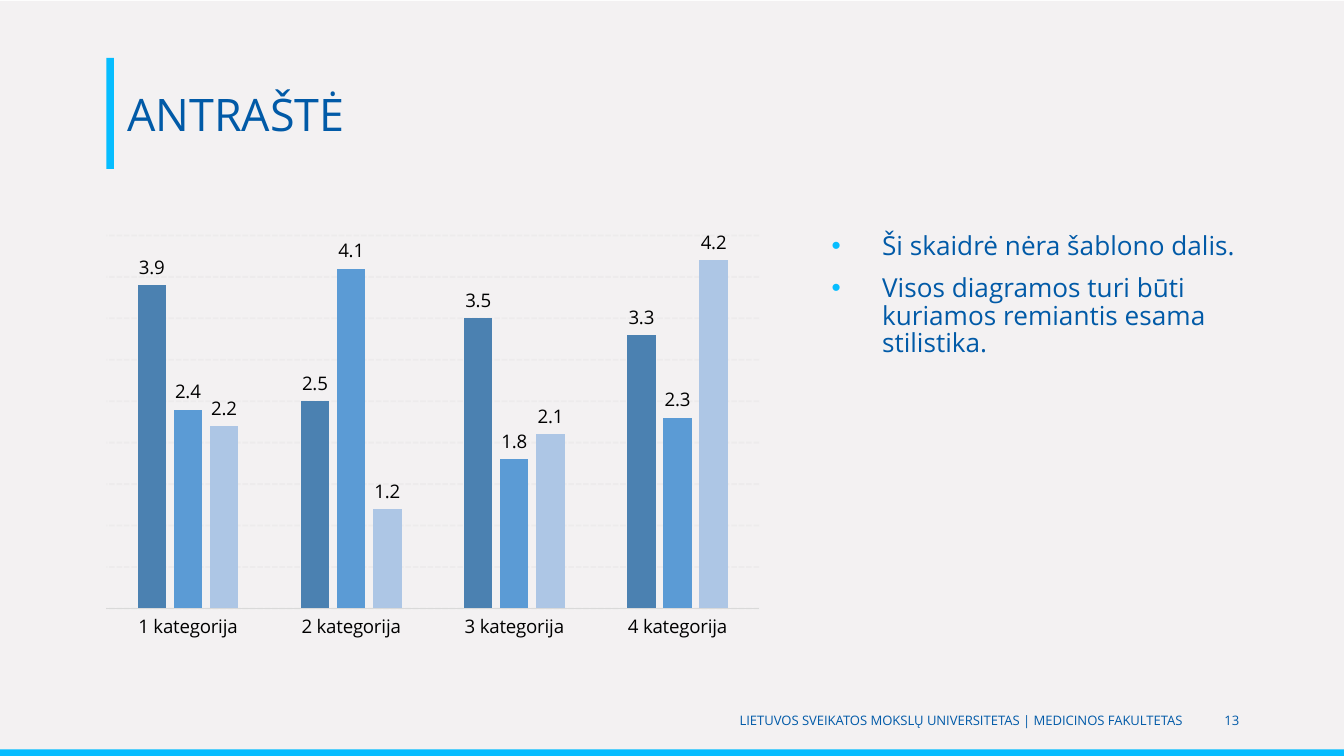
from lxml import etree
from pptx import Presentation
from pptx.chart.data import CategoryChartData
from pptx.dml.color import RGBColor
from pptx.enum.chart import XL_CHART_TYPE, XL_LABEL_POSITION, XL_TICK_MARK
from pptx.enum.dml import MSO_LINE
from pptx.enum.shapes import MSO_SHAPE
from pptx.enum.text import MSO_ANCHOR, PP_ALIGN
from pptx.oxml import parse_xml
from pptx.oxml.ns import nsdecls, qn
from pptx.util import Pt

RECT = MSO_SHAPE.RECTANGLE
MIDDLE = MSO_ANCHOR.MIDDLE
TOP = MSO_ANCHOR.TOP
LEFT, RIGHT = PP_ALIGN.LEFT, PP_ALIGN.RIGHT
COLUMN = XL_CHART_TYPE.COLUMN_CLUSTERED
OUTSIDE = XL_LABEL_POSITION.OUTSIDE_END
NO_TICK = XL_TICK_MARK.NONE
DASH = MSO_LINE.SQUARE_DOT

WHITE = RGBColor(0xFF, 0xFF, 0xFF)
PAPER = RGBColor(0xF3, 0xF1, 0xF2)
CYAN = RGBColor(0x06, 0xBD, 0xFF)
BLUE = RGBColor(0x01, 0x5A, 0xA7)
NAVY = RGBColor(0x01, 0x5A, 0xA8)
BLACK = RGBColor(0, 0, 0)
AXIS = RGBColor(0xD9, 0xD9, 0xD9)
GRID = RGBColor(0xE6, 0xE6, 0xE6)

CATS = [f"{n} kategorija" for n in range(1, 5)]
SERIES = [
    ("Series 1", (3.9, 2.5, 3.5, 3.3), RGBColor(0x4B, 0x81, 0xB1)),
    ("Series 2", (2.4, 4.1, 1.8, 2.3), RGBColor(0x5B, 0x9B, 0xD5)),
    ("Series 3", (2.2, 1.2, 2.1, 4.2), RGBColor(0xAD, 0xC6, 0xE5)),
]


class Deck:
    """Holds the style and the current slide; all lengths are in points."""

    face = "Open Sans"

    def __init__(self, wide, high):
        self.prs = Presentation()
        self.prs.slide_width, self.prs.slide_height = Pt(wide), Pt(high)
        self.slide = self.prs.slides.add_slide(self.prs.slide_layouts[5])

    def style(self, font, size, color):
        font.name, font.size = self.face, Pt(size)
        font.color.rgb = color

    def bar(self, x, y, w, h, color):
        box = self.slide.shapes.add_shape(RECT, Pt(x), Pt(y), Pt(w), Pt(h))
        box.shadow.inherit = False
        box.fill.solid()
        box.fill.fore_color.rgb = color
        box.line.fill.background()

    def put(self, box, lines, size, color, align, anchor):
        frame = box.text_frame
        frame.word_wrap = True
        frame.vertical_anchor = anchor
        frame.text = "\n".join(lines)
        for para in frame.paragraphs:
            para.alignment = align
            self.style(para.font, size, color)
        return frame

    def title(self, x, y, w, h, text):
        box = self.slide.shapes.title
        box.left, box.top, box.width, box.height = Pt(x), Pt(y), Pt(w), Pt(h)
        self.put(box, [text], 24, BLUE, LEFT, MIDDLE)

    def text(self, x, y, w, h, lines, size, color, align=LEFT, anchor=TOP):
        box = self.slide.shapes.add_textbox(Pt(x), Pt(y), Pt(w), Pt(h))
        return self.put(box, lines, size, color, align, anchor)

    def bullets(self, x, y, w, h, lines):
        frame = self.text(x, y, w, h, [], 14, BLUE)
        for i, line in enumerate(lines):
            para = frame.add_paragraph() if i else frame.paragraphs[0]
            para.text = line
            # The first paragraph already holds font defaults; start clean
            props = para._p.get_or_add_pPr()
            for old in list(props):
                props.remove(old)
            para.line_spacing = 0.88
            para.space_before = Pt(7.5 if i else 0)
            props.set("marL", str(Pt(27)))
            props.set("indent", str(-Pt(27)))
            tint = etree.SubElement(props, qn("a:buClr"))
            etree.SubElement(tint, qn("a:srgbClr"), val=str(CYAN))
            etree.SubElement(props, qn("a:buFont"), typeface="Arial")
            etree.SubElement(props, qn("a:buChar"), char="•")
            self.style(para.font, 14, BLUE)

    def chart(self, x, y, w, h):
        data = CategoryChartData(number_format="0.0")
        data.categories = CATS
        for name, vals, _ in SERIES:
            data.add_series(name, vals)
        chart = self.slide.shapes.add_chart(
            COLUMN, Pt(x), Pt(y), Pt(w), Pt(h), data).chart
        chart.has_legend = chart.has_title = False
        self.style(chart.font, 10, BLACK)

        # Columns and their labels
        plot = chart.plots[0]
        plot.gap_width, plot.overlap = 219, -27
        plot.vary_by_categories = False
        for series, (_, _, color) in zip(plot.series, SERIES):
            series.format.fill.solid()
            series.format.fill.fore_color.rgb = color
            labels = series.data_labels
            labels.show_value = True
            labels.position = OUTSIDE
            self.style(labels.font, 10, BLACK)

        # Axes and grid
        cats, vals = chart.category_axis, chart.value_axis
        cats.major_tick_mark = cats.minor_tick_mark = NO_TICK
        cats.format.line.color.rgb = AXIS
        cats.format.line.width = Pt(0.75)
        self.style(cats.tick_labels.font, 10, BLACK)
        vals.visible = False
        vals.minimum_scale, vals.maximum_scale = 0, 4.5
        vals.major_unit = 0.5
        vals.has_major_gridlines = True
        grid = vals.major_gridlines.format.line
        grid.color.rgb = GRID
        grid.width = Pt(1)
        grid.dash_style = DASH

        # Grid transparency
        area = chart._chartSpace.find(".//" + qn("c:plotArea"))
        lines = area.find(".//" + qn("c:majorGridlines"))
        tint = lines.find(".//" + qn("a:srgbClr"))
        etree.SubElement(tint, qn("a:alpha"), val="45000")

        # Plot area, as shares of the chart frame
        for old in area.findall(qn("c:layout")):
            area.remove(old)
        parts = [("layoutTarget", "inner"), ("xMode", "edge"),
                 ("yMode", "edge"), ("x", 0.02), ("y", 0.02),
                 ("w", 0.96), ("h", 0.89)]
        inner = "".join(f'<c:{tag} val="{val}"/>' for tag, val in parts)
        area.insert(0, parse_xml(
            f'<c:layout {nsdecls("c")}><c:manualLayout>{inner}'
            "</c:manualLayout></c:layout>"))


def main():
    deck = Deck(720, 405)

    # Background and accents
    fill = deck.slide.background.fill
    fill.solid()
    fill.fore_color.rgb = WHITE
    deck.bar(0, 0.5, 720, 404.5, PAPER)
    deck.bar(0, 401.5, 720, 3.5, CYAN)
    deck.bar(57, 31, 4, 59.5, CYAN)

    # Title, brought in front of the background
    deck.title(61, 31, 609, 59.5, "ANTRAŠTĖ")
    head = deck.slide.shapes.title._element
    head.getparent().append(head)

    # Chart and notes beside it
    deck.chart(49.7, 121.7, 364.3, 224.6)
    deck.bullets(438.5, 121.7, 232.5, 224.6, [
        "Ši skaidrė nėra šablono dalis.",
        "Visos diagramos turi būti kuriamos remiantis esama stilistika.",
    ])

    # Footer
    deck.text(121, 375, 519.5, 22, [
        "LIETUVOS SVEIKATOS MOKSLŲ UNIVERSITETAS | MEDICINOS FAKULTETAS",
    ], 7, NAVY, RIGHT, MIDDLE)
    deck.text(645, 375, 26, 22, ["13"], 7, NAVY, RIGHT, MIDDLE)

    deck.prs.save("out.pptx")


if __name__ == "__main__":
    main()
